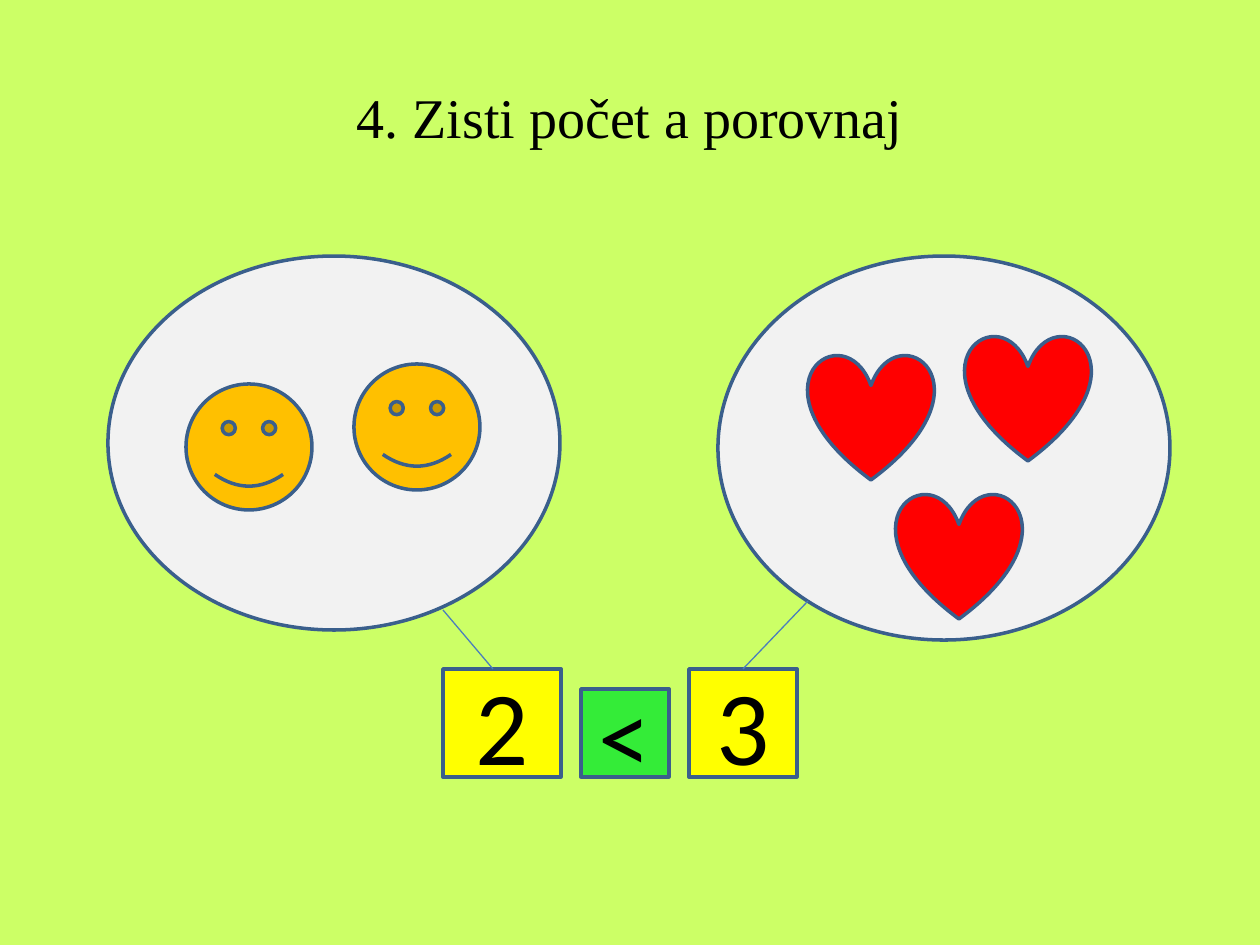
from pptx import Presentation
from pptx.dml.color import RGBColor
from pptx.enum.shapes import MSO_CONNECTOR, MSO_SHAPE
from pptx.enum.text import MSO_ANCHOR, PP_ALIGN
from pptx.oxml.ns import qn
from pptx.util import Emu, Pt
from lxml import etree

OVAL, RECT = MSO_SHAPE.OVAL, MSO_SHAPE.RECTANGLE
SMILEY, HEART = MSO_SHAPE.SMILEY_FACE, MSO_SHAPE.HEART
STRAIGHT = MSO_CONNECTOR.STRAIGHT
MIDDLE, CENTER = MSO_ANCHOR.MIDDLE, PP_ALIGN.CENTER

LIME = RGBColor(0xCC, 0xFF, 0x66)
PALE = RGBColor(0xF2, 0xF2, 0xF2)
OUTLINE = RGBColor(0x3A, 0x5F, 0x8C)
LINK = RGBColor(0x4B, 0x7E, 0xBC)
YELLOW = RGBColor(0xFF, 0xFF, 0x00)
GREEN = RGBColor(0x34, 0xEC, 0x38)
ORANGE = RGBColor(0xFF, 0xC0, 0x00)
RED = RGBColor(0xFF, 0x00, 0x00)
BLACK = RGBColor(0x00, 0x00, 0x00)

ITEM = 126


def px(n):
    """Turn px into EMU at 126 px to the inch."""
    return Emu(round(n * 914400 / 126))


def add_text(sp, text, font="Calibri", size=60, color=BLACK):
    """Write one centred line of text in a shape."""
    tf = sp.text_frame
    tf.word_wrap = True
    tf.vertical_anchor = MIDDLE
    p = tf.paragraphs[0]
    p.alignment = CENTER
    r = p.add_run()
    r.text = text
    r.font.name = font
    r.font.size = Pt(size)
    r.font.color.rgb = color


def add_figure(s, kind, box, fill):
    """Add an outlined preset shape and return it."""
    sp = s.shapes.add_shape(kind, *map(px, box))
    sp.shadow.inherit = False
    sp.fill.solid()
    sp.fill.fore_color.rgb = fill
    sp.line.color.rgb = OUTLINE
    sp.line.width = Pt(2)
    return sp


def add_link(s, start, end):
    """Add a thin line from a set to its number."""
    c = s.shapes.add_connector(STRAIGHT, *map(px, start + end))
    c.line.color.rgb = LINK
    c.line.width = Pt(0.75)
    etree.SubElement(c._element.spPr, qn("a:effectLst"))


def add_title(s, box):
    """Add the slide heading."""
    sp = s.shapes.add_textbox(*map(px, box))
    add_text(sp, "4. Zisti počet a porovnaj", font="Times New Roman", size=32)


def add_set(s, box, kind, fill, offsets):
    """Add an oval set with items at offsets from its corner."""
    add_figure(s, OVAL, box, PALE)
    x, y = box[:2]
    for dx, dy in offsets:
        add_figure(s, kind, (x + dx, y + dy, ITEM, ITEM), fill)


def add_comparison(s, box):
    """Add the two numbers and the sign, resting on the bottom of the box."""
    x, y, w, h = box
    tiles = [("2", 0, 118, h, YELLOW), ("3", w - h, h, h, YELLOW),
             ("<", 138, 88, 88, GREEN)]
    for text, dx, tile_w, tile_h, fill in tiles:
        sp = add_figure(s, RECT, (x + dx, y + h - tile_h, tile_w, tile_h), fill)
        add_text(sp, text)
    add_link(s, (x, y - 59), (x + 50, y))
    add_link(s, (x + 365, y - 68), (x + 300, y))


def main():
    """Build the slide and save it."""
    prs = Presentation()
    prs.slide_width, prs.slide_height = px(1260), px(945)
    s = prs.slides.add_slide(prs.slide_layouts[6])
    s.background.fill.solid()
    s.background.fill.fore_color.rgb = LIME
    add_title(s, (63, 38, 1134, 157))
    add_set(s, (108, 256, 452, 374), SMILEY, ORANGE, [(246, 108), (78, 128)])
    add_set(s, (718, 256, 452, 384), HEART, RED,
            [(178, 237), (247, 79), (90, 98)])
    add_comparison(s, (443, 669, 354, 108))
    prs.save("out.pptx")


if __name__ == "__main__":
    main()
